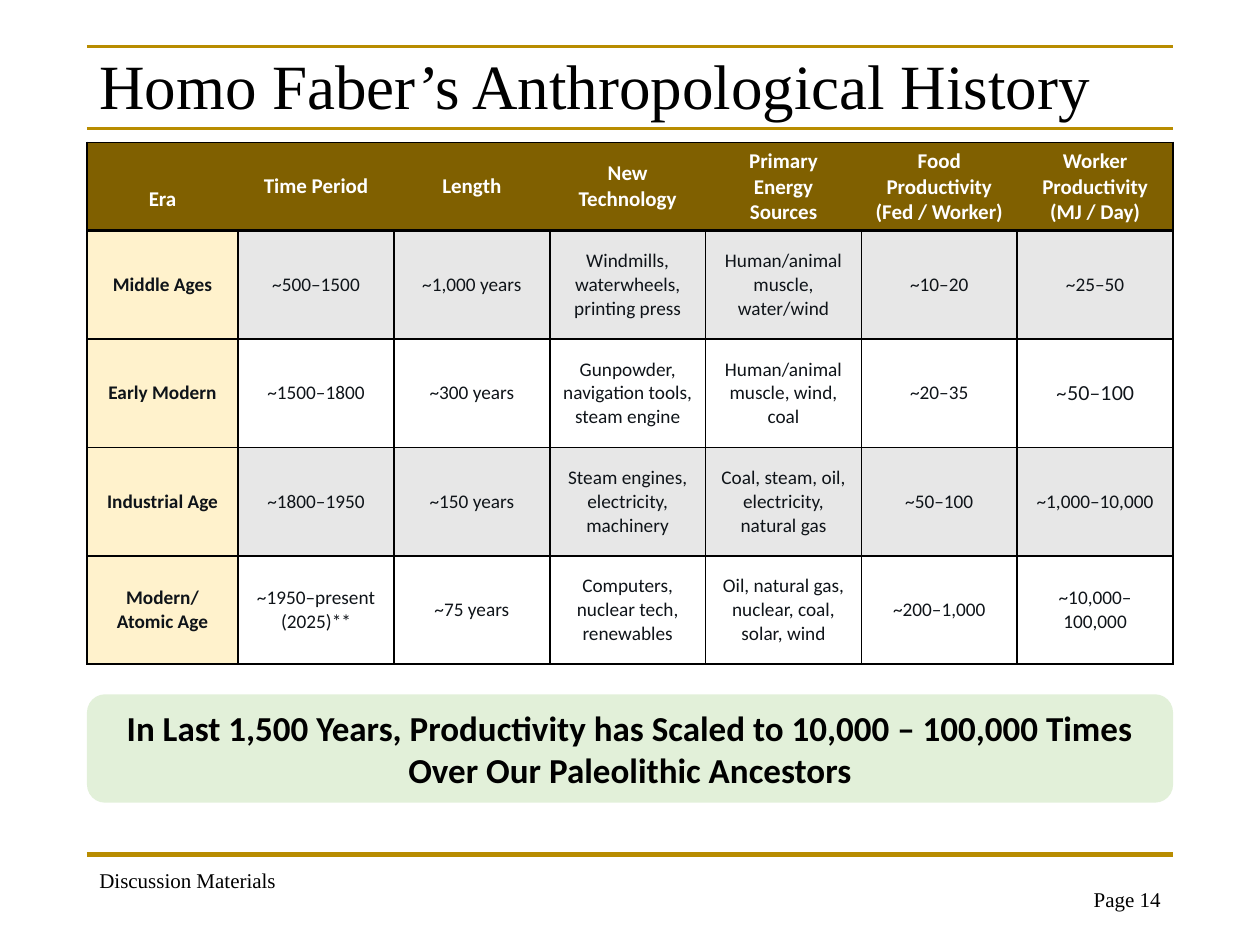
"""Build a slide on productivity through the eras of human history."""
from dataclasses import dataclass
from typing import NamedTuple

from lxml import etree
from pptx import Presentation
from pptx import util as u
from pptx.dml.color import RGBColor
from pptx.enum import shapes, text
from pptx.oxml import ns


@dataclass(frozen=True)
class Theme:
    gold: str = "B88C00"
    header: str = "806000"
    era: str = "FFF2CC"
    band: str = "E7E7E7"
    white: str = "FFFFFF"
    black: str = "000000"
    ink: str = "0F1419"
    takeaway: str = "E2F0D9"
    serif: str = "Times New Roman"
    sans: str = "Calibri"
    accent_font: str = "Lato"
    title_size: int = 36
    takeaway_size: int = 20
    label_size: int = 12
    body_size: int = 11


class Box(NamedTuple):
    """Place and size in percent of the slide."""
    left: float
    top: float
    width: float
    height: float


class Rule(NamedTuple):
    top: float
    weight: float


class Style(NamedTuple):
    size: int
    font: str
    color: str
    bold: bool = False
    align: text.PP_ALIGN = text.PP_ALIGN.CENTER


class Label(NamedTuple):
    box: Box
    wording: str
    style: Style
    anchor: text.MSO_ANCHOR = text.MSO_ANCHOR.TOP
    spacing: float = 1.0


class Edge(NamedTuple):
    tag: str
    weight: float


THEME = Theme()
SLIDE_W, SLIDE_H = u.Inches(10), u.Inches(7.5)
MARGIN, CONTENT_W = 6.9, 86.2
ERA_COL_W = 12
HEADER_H, ROW_H = 8.8, 11.47
LEFT, RIGHT = text.PP_ALIGN.LEFT, text.PP_ALIGN.RIGHT

RULES = [Rule(4.93, 2), Rule(13.6, 2), Rule(90.4, 3)]
LABELS = [
    Label(Box(MARGIN, 5.33, CONTENT_W, 8.27), "Homo Faber’s Anthropological History",
          Style(THEME.title_size, THEME.serif, THEME.black, align=LEFT),
          text.MSO_ANCHOR.MIDDLE, 0.9),
    Label(Box(MARGIN, 91.2, 40, 4), "Discussion Materials",
          Style(THEME.label_size, THEME.serif, THEME.black, align=LEFT)),
    Label(Box(68.4, 93.2, 24.7, 4), "Page 14",
          Style(THEME.label_size, THEME.serif, THEME.black, align=RIGHT)),
]
ERAS = [
    ["Era", "Time Period", "Length", "New Technology", "Primary Energy Sources",
     "Food Productivity\n(Fed / Worker)", "Worker Productivity\n(MJ / Day)"],
    ["Middle Ages", "~500–1500", "~1,000 years", "Windmills, waterwheels, printing press",
     "Human/animal muscle, water/wind", "~10–20", "~25–50"],
    ["Early Modern", "~1500–1800", "~300 years", "Gunpowder, navigation tools, steam engine",
     "Human/animal muscle, wind, coal", "~20–35", "~50–100"],
    ["Industrial Age", "~1800–1950", "~150 years", "Steam engines, electricity, machinery",
     "Coal, steam, oil, electricity, natural gas", "~50–100", "~1,000–10,000"],
    ["Modern/\nAtomic Age", "~1950–present (2025)**", "~75 years",
     "Computers, nuclear tech, renewables", "Oil, natural gas, nuclear, coal, solar, wind",
     "~200–1,000", "~10,000–100,000"],
]
TAKEAWAY = ("In Last 1,500 Years, Productivity has Scaled to 10,000 – 100,000 Times "
            "Over Our Paleolithic Ancestors")


def across(percent: float) -> int:
    return round(SLIDE_W * percent / 100)


def down(percent: float) -> int:
    return round(SLIDE_H * percent / 100)


def place(box: Box) -> tuple[int, int, int, int]:
    return across(box.left), down(box.top), across(box.width), down(box.height)


def write(frame, wording: str, style: Style, spacing: float = 1.0) -> None:
    frame.word_wrap = True
    for index, line in enumerate(wording.split("\n")):
        paragraph = frame.add_paragraph() if index else frame.paragraphs[0]
        paragraph.alignment = style.align
        paragraph.line_spacing = spacing
        run = paragraph.add_run()
        run.text = line
        run.font.size = u.Pt(style.size)
        run.font.name = style.font
        run.font.bold = style.bold
        run.font.color.rgb = RGBColor.from_string(style.color)


def draw_rule(slide, rule: Rule) -> None:
    line = slide.shapes.add_connector(
        shapes.MSO_CONNECTOR.STRAIGHT, across(MARGIN), down(rule.top),
        across(MARGIN + CONTENT_W), down(rule.top))
    line.line.color.rgb = RGBColor.from_string(THEME.gold)
    line.line.width = u.Pt(rule.weight)
    etree.SubElement(line._element.spPr, ns.qn("a:effectLst"))


def draw_label(slide, label: Label) -> None:
    frame = slide.shapes.add_textbox(*place(label.box)).text_frame
    frame.vertical_anchor = label.anchor
    write(frame, label.wording, label.style, label.spacing)


def cell_edges(row: int, column: int, last_column: int) -> list[Edge]:
    in_header = row == 0
    return [
        Edge("a:lnL", 0 if in_header and column > 0 else 1),
        Edge("a:lnR", 0 if in_header and column < last_column else 1),
        Edge("a:lnT", 2 if row == 1 else 1),
        Edge("a:lnB", 2 if in_header else 1),
    ]


def draw_edges(cell, edges: list[Edge]) -> None:
    properties = cell._tc.get_or_add_tcPr()
    for position, edge in enumerate(edges):
        line = etree.Element(ns.qn(edge.tag), w=str(u.Pt(edge.weight)))
        if edge.weight:
            fill = etree.SubElement(line, ns.qn("a:solidFill"))
            etree.SubElement(fill, ns.qn("a:srgbClr"), val=THEME.black)
        else:
            etree.SubElement(line, ns.qn("a:noFill"))
        properties.insert(position, line)


def cell_look(row: int, column: int) -> tuple[str, Style]:
    if row == 0:
        return THEME.header, Style(THEME.label_size, THEME.sans, THEME.white, True)
    if column == 0:
        return THEME.era, Style(THEME.body_size, THEME.sans, THEME.ink, True)
    font = THEME.accent_font if ERAS[row][0] == "Early Modern" and column == 6 else THEME.sans
    return THEME.band if row % 2 else THEME.white, Style(THEME.body_size, font, THEME.ink)


def draw_eras(slide) -> None:
    last_column = len(ERAS[0]) - 1
    box = Box(MARGIN, 15.07, CONTENT_W, HEADER_H + ROW_H * (len(ERAS) - 1))
    table = slide.shapes.add_table(len(ERAS), last_column + 1, *place(box)).table
    table.horz_banding = False
    for index, column in enumerate(table.columns):
        column.width = across((CONTENT_W - ERA_COL_W) / last_column if index else ERA_COL_W)
    for row, entries in enumerate(ERAS):
        table.rows[row].height = down(ROW_H if row else HEADER_H)
        for column, entry in enumerate(entries):
            cell = table.cell(row, column)
            color, style = cell_look(row, column)
            cell.fill.solid()
            cell.fill.fore_color.rgb = RGBColor.from_string(color)
            cell.vertical_anchor = text.MSO_ANCHOR.MIDDLE
            write(cell.text_frame, entry, style)
            draw_edges(cell, cell_edges(row, column, last_column))
    table.cell(0, 0).margin_top = u.Inches(0.25)


def draw_takeaway(slide) -> None:
    panel = slide.shapes.add_shape(shapes.MSO_SHAPE.ROUNDED_RECTANGLE,
                                   *place(Box(MARGIN, 73.47, CONTENT_W, ROW_H)))
    panel.shadow.inherit = False
    panel.fill.solid()
    panel.fill.fore_color.rgb = RGBColor.from_string(THEME.takeaway)
    panel.line.fill.background()
    panel.text_frame.vertical_anchor = text.MSO_ANCHOR.MIDDLE
    write(panel.text_frame, TAKEAWAY,
          Style(THEME.takeaway_size, THEME.sans, THEME.black, True))


def main() -> None:
    deck = Presentation()
    deck.slide_width, deck.slide_height = SLIDE_W, SLIDE_H
    slide = deck.slides.add_slide(deck.slide_layouts[6])
    for rule in RULES:
        draw_rule(slide, rule)
    for label in LABELS:
        draw_label(slide, label)
    draw_eras(slide)
    draw_takeaway(slide)
    deck.save("out.pptx")


if __name__ == "__main__":
    main()
